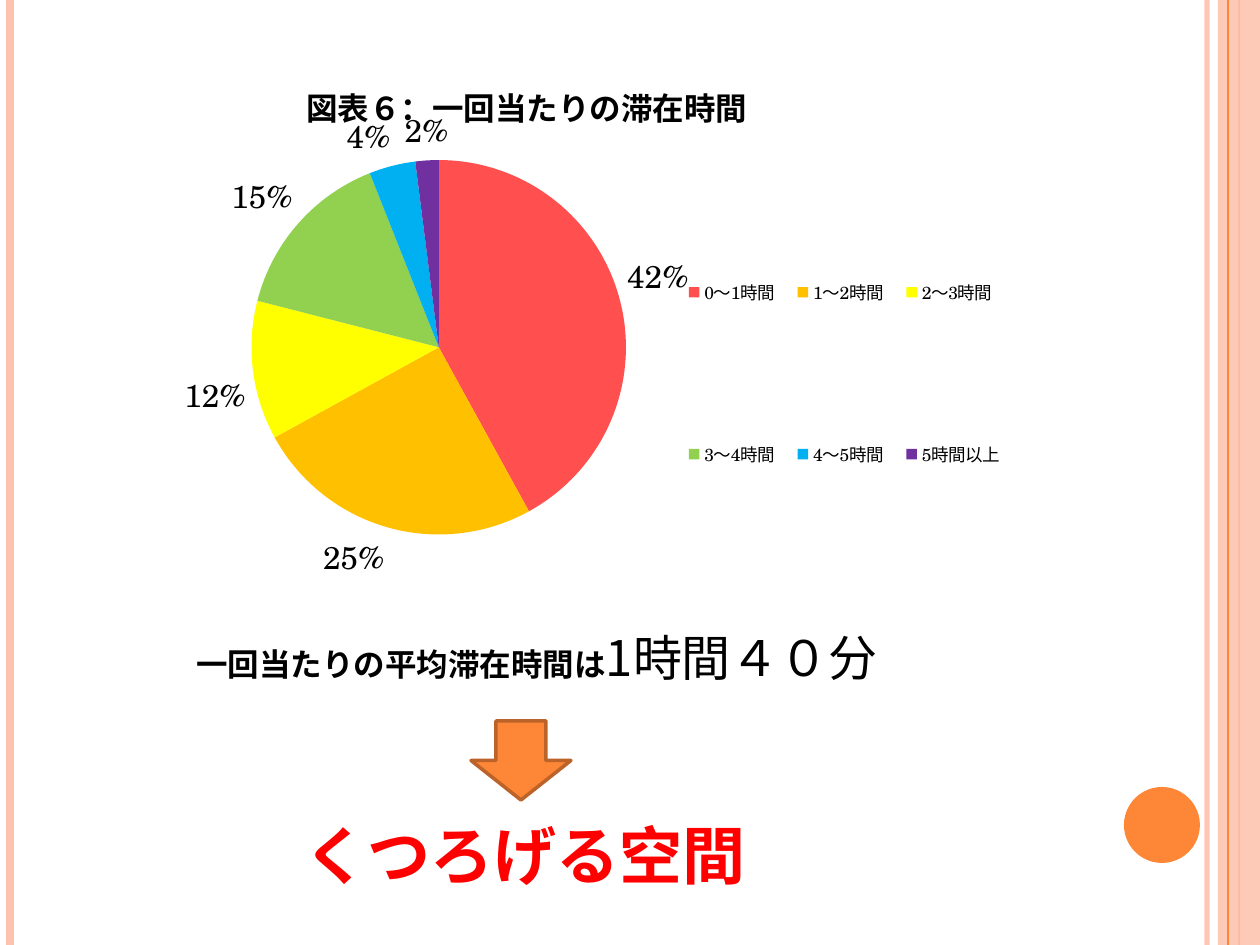
import pptx
import pptx.chart.data
import pptx.dml.color
import pptx.enum.chart
import pptx.enum.shapes
import pptx.enum.text
import pptx.oxml
import pptx.oxml.ns
import pptx.util
import lxml.etree

PX = 914400 // 126
COLORS = {
    "peach": "FEC3AE", "orange": "FE8637", "brown": "BC6329",
    "black": "000000", "red": "FF0000", "amber": "FFC000", "yellow": "FFFF00",
    "green": "92D050", "blue": "00B0F0", "purple": "7030A0",
}
qn = pptx.oxml.ns.qn


def paint(color_format, name, alpha=None):
    """Set a colour by name, with optional opacity in percent."""
    color_format.rgb = pptx.dml.color.RGBColor.from_string(COLORS[name])
    if alpha:
        for node in color_format._xFill.iter(qn("a:srgbClr")):
            lxml.etree.SubElement(node, qn("a:alpha"), val=str(alpha * 1000))


def style(font, face, size, name, bold=False):
    font.name, font.size, font.bold = face, pptx.util.Pt(size), bold
    font.fill.solid()
    paint(font.color, name)


deck = pptx.Presentation()
deck.slide_width, deck.slide_height = 1260 * PX, 945 * PX
page = deck.slides.add_slide(deck.slide_layouts[6])
shapes = page.shapes
SHAPE = pptx.enum.shapes.MSO_SHAPE

# Edge stripes: x, colour, width in points, opacity; the band lies under the last
for x, name, width, alpha in [
    (1207, "peach", 3, 93), (10, "peach", 4.5, None),
    (1239, "orange", 1.5, None), (1228, "orange", 0.75, None),
]:
    if x == 1228:
        band = shapes.add_shape(SHAPE.RECTANGLE, 1218 * PX, 0, 42 * PX, 945 * PX)
        band.shadow.inherit = False
        band.fill.solid()
        paint(band.fill.fore_color, "peach", 87)
        band.line.fill.background()
    stripe = shapes.add_connector(
        pptx.enum.shapes.MSO_CONNECTOR.STRAIGHT, x * PX, 0, x * PX, 945 * PX)
    stripe.line.width = pptx.util.Pt(width)
    stripe.line.fill.solid()
    paint(stripe.line.fill.fore_color, name, alpha)
    lxml.etree.SubElement(stripe._element.spPr, qn("a:effectLst"))

# Corner disc and down arrow
for kind, left, top, width, height, outline in [
    (SHAPE.OVAL, 1124, 787, 76, 76, None),
    (SHAPE.DOWN_ARROW, 471, 721, 100, 79, "brown"),
]:
    mark = shapes.add_shape(kind, left * PX, top * PX, width * PX, height * PX)
    mark.shadow.inherit = False
    mark.fill.solid()
    paint(mark.fill.fore_color, "orange")
    if outline:
        mark.line.width = pptx.util.Pt(2)
        mark.line.fill.solid()
        paint(mark.line.fill.fore_color, outline)
    else:
        mark.line.fill.background()

# Pie chart of time spent per visit
slices = [
    ("0～1時間", 42, "red"), ("1～2時間", 25, "amber"), ("2～3時間", 12, "yellow"),
    ("3～4時間", 15, "green"), ("4～5時間", 4, "blue"), ("5時間以上", 2, "purple"),
]
data = pptx.chart.data.CategoryChartData()
data.categories = [label for label, value, name in slices]
data.add_series("Series 1", [value for label, value, name in slices])
chart = shapes.add_chart(
    pptx.enum.chart.XL_CHART_TYPE.PIE, 154 * PX, 45 * PX, 863 * PX, 576 * PX, data).chart
style(chart.font, "TeX Gyre Schola", 10, "black")
chart.has_title = True
span = chart.chart_title.text_frame.paragraphs[0].add_run()
span.text = "図表６：一回当たりの滞在時間"
style(span.font, "Arial", 18, "black", True)
chart.has_legend = True
chart.legend.position = pptx.enum.chart.XL_LEGEND_POSITION.TOP
chart.legend.include_in_layout = False

# Slices are shrunk for an explosion of 6 but stay together
plot = chart.plots[0]
plot.vary_by_categories = True
series = plot.series[0]
for index, (label, value, name) in enumerate(slices):
    fill = series.points[index].format.fill
    fill.solid()
    paint(fill.fore_color, name, 69 if name == "red" else None)
points = series._element.findall(qn("c:dPt"))
for node, value in [(points[0], 6)] + [(p.find(qn("c:spPr")), 0) for p in points]:
    explosion = lxml.etree.Element(qn("c:explosion"), val=str(value))
    node.addprevious(explosion)

# Percentage labels
plot.has_data_labels = True
labels = plot.data_labels
labels.show_percentage, labels.show_value = True, False
labels.number_format, labels.number_format_is_linked = "0%", False
labels.position = pptx.enum.chart.XL_LABEL_POSITION.OUTSIDE_END
style(labels.font, "TeX Gyre Schola", 18, "black")

# Manual places of title, plot and legend, as fractions of the chart
C_NS = pptx.oxml.ns.nsdecls("c")
root = chart._chartSpace.chart
for tag, after, inner, fractions in [
    ("c:title", "c:tx", False, {"x": 0.17, "y": 0.05}),
    ("c:plotArea", None, True, {"x": 0.1, "y": 0.14, "w": 0.46, "h": 0.77}),
    ("c:legend", "c:legendPos", False, {"x": 0.6, "y": 0.17, "w": 0.41, "h": 0.8}),
]:
    part = root.find(qn(tag))
    for old in part.findall(qn("c:layout")):
        part.remove(old)
    target = '<c:layoutTarget val="inner"/>' if inner else ""
    modes = "".join(f'<c:{key}Mode val="edge"/>' for key in "xy")
    places = "".join(f'<c:{key} val="{value}"/>' for key, value in fractions.items())
    layout = pptx.oxml.parse_xml(
        f"<c:layout {C_NS}><c:manualLayout>{target}{modes}{places}"
        "</c:manualLayout></c:layout>")
    if after:
        part.find(qn(after)).addnext(layout)
    else:
        part.insert(0, layout)

# Average stay and conclusion
for left, top, width, height, spans in [
    (184, 621, 725, 72, [
        ("一回当たりの平均滞在時間は", "Arial", 18, "black", True),
        ("1時間４０分", "Noto Sans CJK JP", 28, "black", False)]),
    (292, 810, 507, 89, [("くつろげる空間", "Noto Sans CJK JP", 36, "red", True)]),
]:
    box = shapes.add_textbox(left * PX, top * PX, width * PX, height * PX)
    box.text_frame.word_wrap = True
    box.text_frame.auto_size = pptx.enum.text.MSO_AUTO_SIZE.SHAPE_TO_FIT_TEXT
    para = box.text_frame.paragraphs[0]
    for text, face, size, name, bold in spans:
        span = para.add_run()
        span.text = text
        style(span.font, face, size, name, bold)
        lxml.etree.SubElement(span.font._element, qn("a:ea"), typeface="Noto Sans CJK JP")

deck.save("out.pptx")
